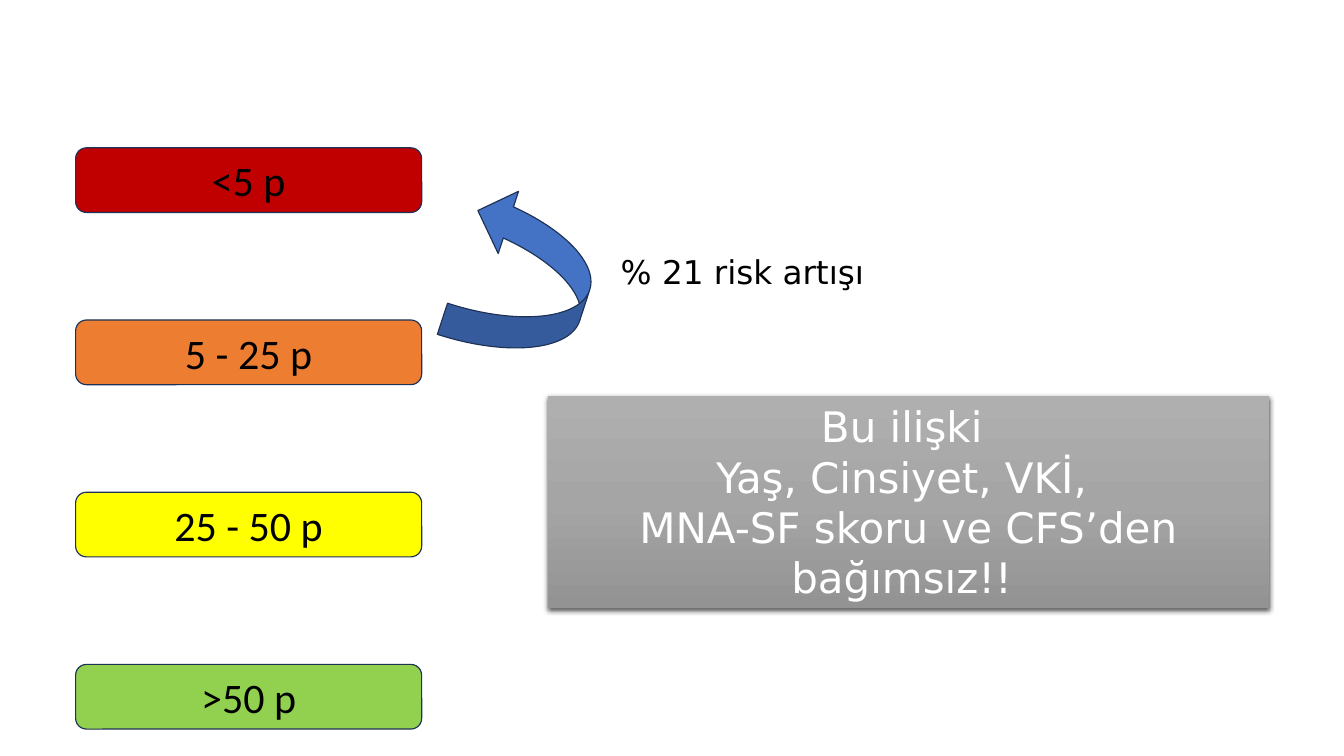
import pptx
import pptx.util
import pptx.dml.color
import pptx.enum.shapes
import pptx.enum.text
import pptx.oxml
import pptx.oxml.ns
from dataclasses import dataclass

# Content
BANDS = [
    ("<5 p", "C00000"),
    ("5 - 25 p", "ED7D31"),
    ("25 - 50 p", "FFFF00"),
    (">50 p", "92D050"),
]
RISK = ["% 21 risk artışı"]
NOTE = ["Bu ilişki ", "Yaş, Cinsiyet, VKİ, ", "MNA-SF skoru ve CFS’den bağımsız!! "]


@dataclass(frozen=True)
class Theme:
    band_font: str = "Calibri"
    text_font: str = "DejaVu Sans"
    large: int = 36
    medium: int = 28
    dark: str = "000000"
    light: str = "FFFFFF"
    arrow: str = "4472C4"
    outline: str = "1E3256"
    note_stops: tuple = ((0, "AFAFAF"), (50, "A5A5A5"), (100, "939393"))


T = Theme()
Inches, Pt = pptx.util.Inches, pptx.util.Pt
SHAPE = pptx.enum.shapes.MSO_SHAPE
ALIGN = pptx.enum.text.PP_ALIGN
MIDDLE = pptx.enum.text.MSO_ANCHOR.MIDDLE
TOP = pptx.enum.text.MSO_ANCHOR.TOP
GROW = pptx.enum.text.MSO_AUTO_SIZE.SHAPE_TO_FIT_TEXT


def rgb(value):
    return pptx.dml.color.RGBColor.from_string(value)


def add_shape(slide, kind, box, fill):
    sp = slide.shapes.add_shape(kind, *map(Inches, box))
    sp.shadow.inherit = False
    sp.fill.solid()
    sp.fill.fore_color.rgb = rgb(fill)
    sp.line.color.rgb = rgb(T.outline)
    sp.line.width = Pt(1)
    return sp


def write(sp, lines, font, size, color, align, anchor):
    tf = sp.text_frame
    tf.word_wrap = True
    tf.vertical_anchor = anchor
    for i, line in enumerate(lines):
        p = tf.paragraphs[0] if i == 0 else tf.add_paragraph()
        p.alignment = align
        r = p.add_run()
        r.text = line
        r.font.name = font
        r.font.size = Pt(size)
        r.font.color.rgb = rgb(color)


def shade_note(sp):
    """Vertical three-stop gradient and a soft shadow below."""
    ns = pptx.oxml.ns.nsdecls("a")
    stops = "".join(
        f'<a:gs pos="{pos * 1000}"><a:srgbClr val="{color}"/></a:gs>'
        for pos, color in T.note_stops)
    gradient = pptx.oxml.parse_xml(
        f'<a:gradFill {ns} rotWithShape="1"><a:gsLst>{stops}</a:gsLst>'
        '<a:lin ang="5400000" scaled="0"/></a:gradFill>')
    shadow = pptx.oxml.parse_xml(
        f'<a:outerShdw {ns} blurRad="{Pt(4.5)}" dist="{Pt(1.5)}" dir="5400000" '
        'algn="ctr" rotWithShape="0"><a:srgbClr val="000000">'
        '<a:alpha val="63000"/></a:srgbClr></a:outerShdw>')
    props = sp._element.spPr
    solid = props.find(pptx.oxml.ns.qn("a:solidFill"))
    props.replace(solid, gradient)
    props.find(pptx.oxml.ns.qn("a:effectLst")).append(shadow)


def main():
    prs = pptx.Presentation()
    prs.slide_width, prs.slide_height = Inches(16), Inches(9)
    slide = prs.slides.add_slide(prs.slide_layouts[6])

    # Percentile bands
    top, pitch = 1.76, 2.05
    for i, (label, color) in enumerate(BANDS):
        sp = add_shape(slide, SHAPE.ROUNDED_RECTANGLE,
                       (0.9, top + i * pitch, 4.12, 0.77), color)
        write(sp, [label], T.band_font, T.large, T.dark, ALIGN.CENTER, MIDDLE)

    # Arrow from the second band up to the first
    arrow = add_shape(slide, SHAPE.CURVED_UP_ARROW, (5.28, 2.52, 1.94, 1.56), T.arrow)
    arrow.rotation = 288.1

    # Risk label
    risk = slide.shapes.add_textbox(*map(Inches, (7.29, 2.95, 3.52, 0.57)))
    write(risk, RISK, T.text_font, T.medium, T.dark, ALIGN.LEFT, TOP)
    risk.text_frame.auto_size = GROW

    # Independence note
    note = add_shape(slide, SHAPE.RECTANGLE, (6.52, 4.72, 8.59, 2.52), T.note_stops[1][1])
    note.line.fill.background()
    shade_note(note)
    write(note, NOTE, T.text_font, T.large, T.light, ALIGN.CENTER, TOP)
    note.text_frame.auto_size = GROW

    prs.save("out.pptx")


if __name__ == "__main__":
    main()
